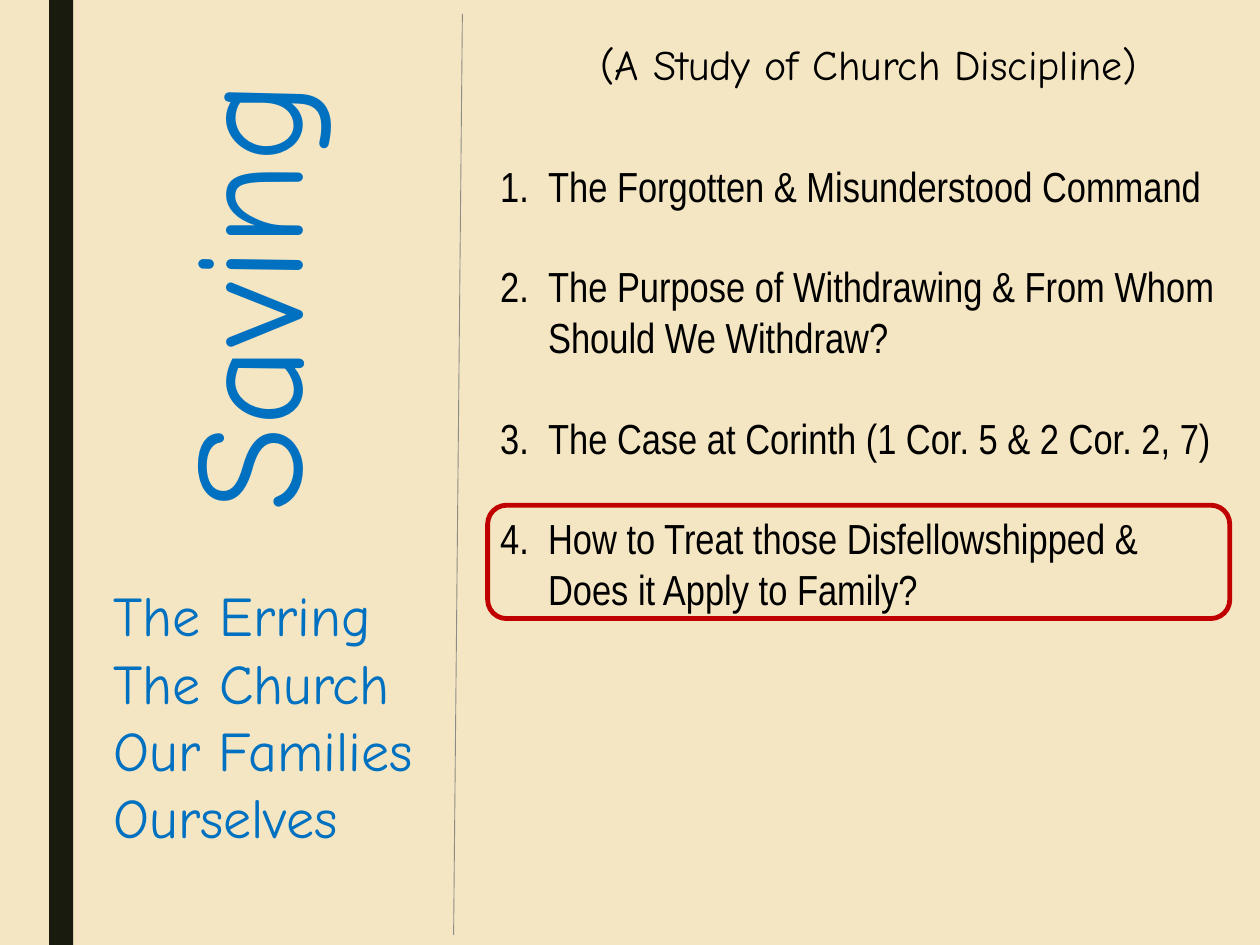
from dataclasses import dataclass

from lxml.etree import SubElement
from pptx import Presentation
from pptx.dml.color import RGBColor
from pptx.enum.shapes import MSO_CONNECTOR, MSO_SHAPE
from pptx.enum.text import MSO_ANCHOR, MSO_AUTO_SIZE, PP_ALIGN
from pptx.oxml.ns import qn
from pptx.util import Inches, Pt


@dataclass(frozen=True)
class Theme:
    background: RGBColor = RGBColor(0xF5, 0xE6, 0xC3)
    bar: RGBColor = RGBColor(0x19, 0x1B, 0x0E)
    blue: RGBColor = RGBColor(0x00, 0x70, 0xC0)
    black: RGBColor = RGBColor(0, 0, 0)
    rule: RGBColor = RGBColor(0x8C, 0x8D, 0x86)
    highlight: RGBColor = RGBColor(0xC0, 0, 0)
    hand: str = "Comic Neue"
    narrow: str = "Arial Narrow"
    title_size: int = 88
    list_size: int = 32
    text_size: int = 24
    lesson_gap: float = 28.8


@dataclass(frozen=True)
class Box:
    left: float
    top: float
    width: float
    height: float

    def inches(self) -> tuple:
        return tuple(map(Inches, (self.left, self.top, self.width, self.height)))


@dataclass(frozen=True)
class TextStyle:
    font: str
    size: int
    color: RGBColor
    align: PP_ALIGN = PP_ALIGN.LEFT
    gap: float = 0
    numbered: bool = False


THEME = Theme()
SAVED = ["The Erring", "The Church", "Our Families", "Ourselves"]
LESSONS = [
    "The Forgotten & Misunderstood Command",
    "The Purpose of Withdrawing & From Whom Should We Withdraw?",
    "The Case at Corinth (1 Cor. 5 & 2 Cor. 2, 7)",
    "How to Treat those Disfellowshipped & Does it Apply to Family?",
]


def set_bullet(p, numbered: bool) -> None:
    pPr = p._p.get_or_add_pPr()
    indent = Inches(0.38) if numbered else 0
    pPr.set("marL", str(indent))
    pPr.set("indent", str(-indent))
    if numbered:
        SubElement(pPr, qn("a:buFontTx"))
        SubElement(pPr, qn("a:buAutoNum"), type="arabicPeriod")
    else:
        SubElement(pPr, qn("a:buNone"))


def write_text(sp, box: Box, lines: list[str], style: TextStyle) -> None:
    sp.left, sp.top, sp.width, sp.height = box.inches()
    tf = sp.text_frame
    tf.text = "\n".join(lines)
    tf.word_wrap = True
    tf.auto_size = MSO_AUTO_SIZE.NONE
    tf.vertical_anchor = MSO_ANCHOR.TOP
    for i, p in enumerate(tf.paragraphs):
        set_bullet(p, style.numbered)
        p.alignment = style.align
        p.space_before = Pt(style.gap if i else 0)
        for r in p.runs:
            r.font.name = style.font
            r.font.size = Pt(style.size)
            r.font.color.rgb = style.color


def add_bar(slide, box: Box) -> None:
    sp = slide.shapes.add_shape(MSO_SHAPE.RECTANGLE, *box.inches())
    sp.shadow.inherit = False
    sp.fill.solid()
    sp.fill.fore_color.rgb = THEME.bar
    sp.line.fill.background()


def add_highlight(slide, box: Box) -> None:
    sp = slide.shapes.add_shape(MSO_SHAPE.ROUNDED_RECTANGLE, *box.inches())
    sp.shadow.inherit = False
    sp.fill.background()
    sp.line.color.rgb = THEME.highlight
    sp.line.width = Pt(2.75)


def add_rule(slide, start: tuple[float, float], end: tuple[float, float]) -> None:
    line = slide.shapes.add_connector(
        MSO_CONNECTOR.STRAIGHT, *map(Inches, (*start, *end)))
    line.line.color.rgb = THEME.rule
    line.line.width = Pt(0.5)
    SubElement(line._element.spPr, qn("a:effectLst"))


def main() -> None:
    prs = Presentation()
    prs.slide_width, prs.slide_height = Inches(10), Inches(7.5)
    slide = prs.slides.add_slide(prs.slide_layouts.get_by_name("Two Content"))
    slide.background.fill.solid()
    slide.background.fill.fore_color.rgb = THEME.background
    title, saved, lessons = slide.placeholders

    add_bar(slide, Box(0.39, 0, 0.19, 7.5))
    write_text(title, Box(-0.17, 1.56, 4.18, 1.58), ["Saving"],
               TextStyle(THEME.hand, THEME.title_size, THEME.blue, PP_ALIGN.CENTER))
    title.rotation = 270
    write_text(saved, Box(0.8, 4.56, 2.83, 2.26), SAVED,
               TextStyle(THEME.hand, THEME.list_size, THEME.blue))
    add_rule(slide, (3.6, 7.42), (3.67, 0.11))

    subtitle_box = Box(3.87, 0.26, 6.05, 0.5)
    subtitle = slide.shapes.add_textbox(*subtitle_box.inches())
    write_text(subtitle, subtitle_box, ["(A Study of Church Discipline)"],
               TextStyle(THEME.hand, THEME.text_size, THEME.black, PP_ALIGN.CENTER))
    write_text(lessons, Box(3.87, 1.22, 5.89, 3.74), LESSONS,
               TextStyle(THEME.narrow, THEME.text_size, THEME.black,
                         gap=THEME.lesson_gap, numbered=True))
    add_highlight(slide, Box(3.87, 4.01, 5.89, 0.9))

    prs.save("out.pptx")


if __name__ == "__main__":
    main()
